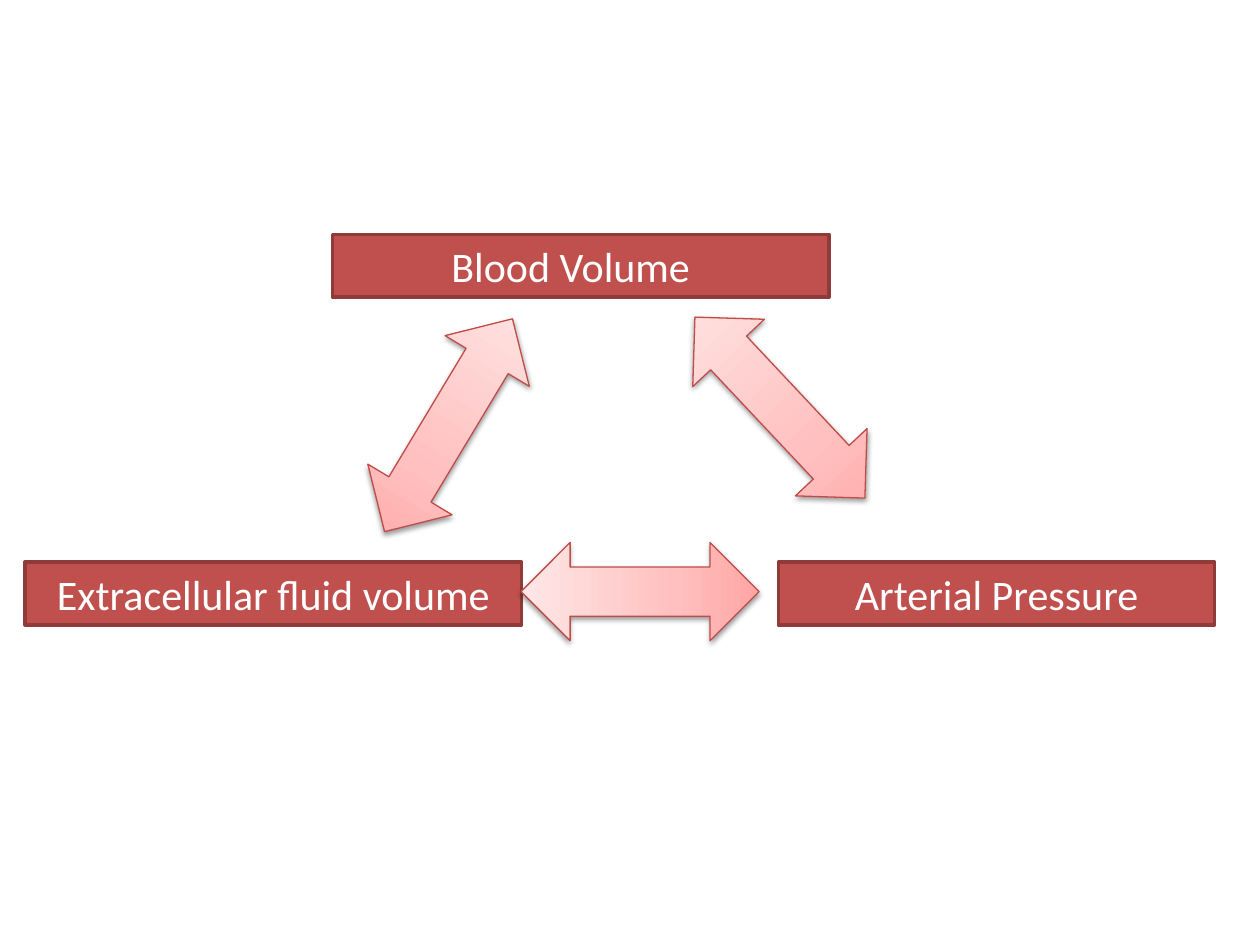
from lxml import etree
from pptx import Presentation
from pptx import util as u
from pptx.dml.color import RGBColor
from pptx.enum import shapes, text
from pptx.oxml import ns

HUES = {
    "box": "C0504D", "edge": "8E3B39", "rim": "BF4C48", "ink": "FFFFFF",
    "deep": "FFA6A5", "mid": "FFC0BF", "pale": "FFE7E7", "shade": "000000",
}


def write(frame, words, font="Calibri", size=24, hue="ink"):
    para = frame.paragraphs[0]
    para.alignment = text.PP_ALIGN.CENTER
    run = para.add_run()
    run.text = words
    run.font.name = font
    run.font.size = u.Pt(size)
    run.font.color.rgb = RGBColor.from_string(HUES[hue])


def add(node, tag, **attrs):
    return etree.SubElement(node, ns.qn(tag), {k: str(v) for k, v in attrs.items()})


class Deck:
    def __init__(self, wide, high):
        self.prs = Presentation()
        self.prs.slide_width = u.Inches(wide)
        self.prs.slide_height = u.Inches(high)
        self.slide = self.prs.slides.add_slide(self.prs.slide_layouts[6])

    def shape(self, kind, spot, line, width):
        item = self.slide.shapes.add_shape(kind, *map(u.Inches, spot))
        item.shadow.inherit = False
        item.line.color.rgb = RGBColor.from_string(HUES[line])
        item.line.width = u.Pt(width)
        return item

    def box(self, words, left, top, wide, inset=0.1):
        item = self.shape(shapes.MSO_SHAPE.RECTANGLE, (left, top, wide, 0.5), "edge", 2)
        item.fill.solid()
        item.fill.fore_color.rgb = RGBColor.from_string(HUES["box"])
        frame = item.text_frame
        frame.word_wrap = True
        frame.auto_size = text.MSO_AUTO_SIZE.SHAPE_TO_FIT_TEXT
        frame.vertical_anchor = text.MSO_ANCHOR.TOP
        frame.margin_right = u.Inches(inset)
        write(frame, words)

    def arrow(self, left, top, high, turn):
        kind = shapes.MSO_SHAPE.UP_DOWN_ARROW
        item = self.shape(kind, (left, top, 0.78, high), "rim", 0.75)
        item.rotation = turn
        self.blend(item)
        self.shade(item)

    def blend(self, item):
        item.fill.gradient()
        grad = item._element.spPr.find(ns.qn("a:gradFill"))
        for child in list(grad):
            grad.remove(child)
        grad.set("rotWithShape", "1")
        stops = add(grad, "a:gsLst")
        for pos, hue in ((0, "deep"), (35, "mid"), (100, "pale")):
            stop = add(stops, "a:gs", pos=pos * 1000)
            add(stop, "a:srgbClr", val=HUES[hue])
        add(grad, "a:lin", ang=270 * 60000, scaled=1)

    def shade(self, item):
        effect = item._element.spPr.find(ns.qn("a:effectLst"))
        cast = add(effect, "a:outerShdw", blurRad=u.Pt(3.1), dist=u.Pt(1.6),
                   dir=90 * 60000, rotWithShape=0)
        tint = add(cast, "a:srgbClr", val=HUES["shade"])
        add(tint, "a:alpha", val=38000)


def main():
    deck = Deck(10, 7.5)
    deck.box("Blood Volume", 2.64, 1.86, 3.94, inset=0.26)
    deck.box("Extracellular fluid volume", 0.2, 4.46, 3.94)
    deck.box("Arterial Pressure", 6.18, 4.46, 3.46)
    deck.arrow(3.17, 2.39, 1.97, 31)
    deck.arrow(5.8, 2.25, 1.97, 316.8)
    deck.arrow(4.69, 3.75, 1.89, 270)
    deck.prs.save("out.pptx")


if __name__ == "__main__":
    main()
